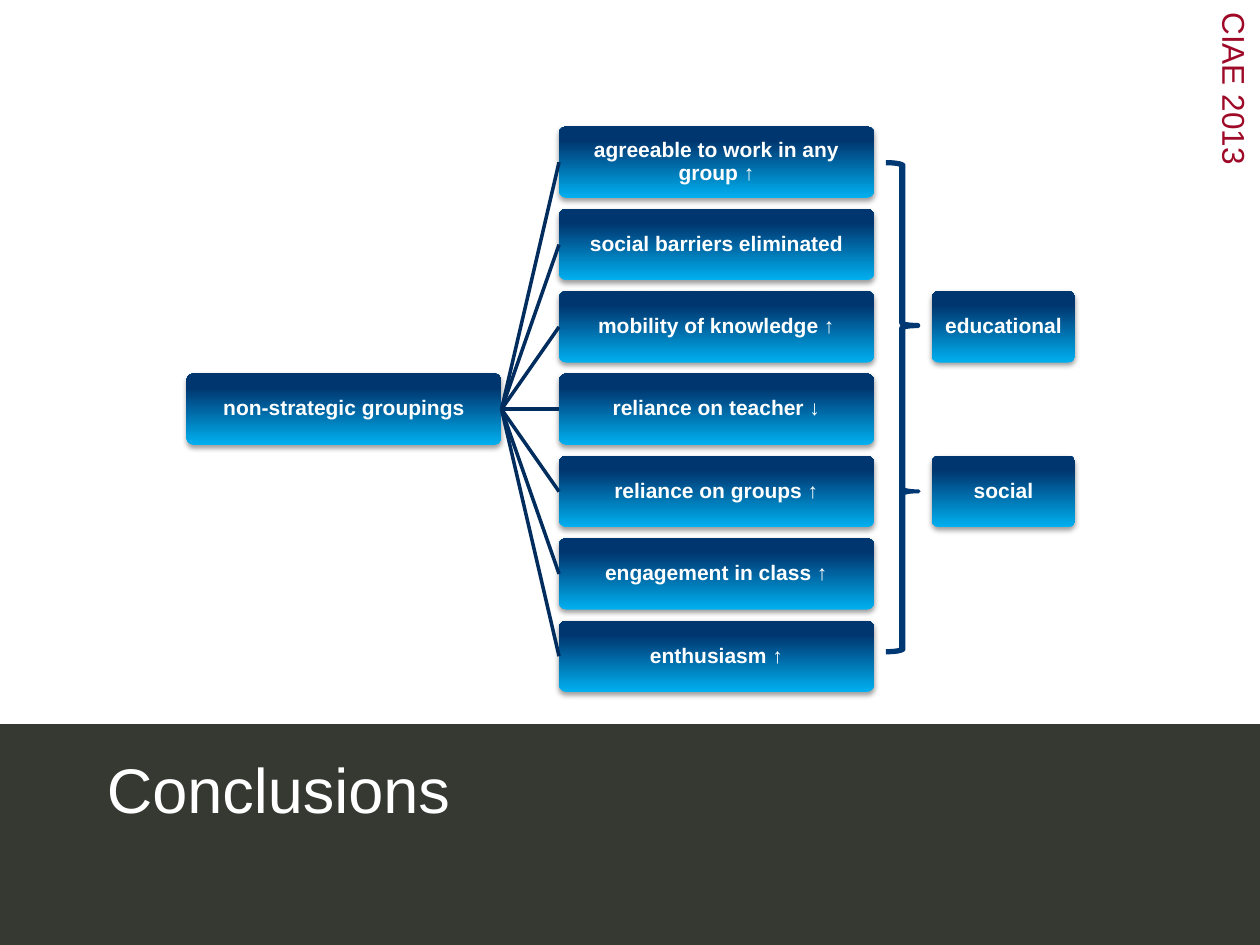
from copy import deepcopy
from dataclasses import dataclass

from lxml.etree import SubElement
from pptx import Presentation
from pptx.dml.color import RGBColor as RGB
from pptx.enum.shapes import MSO_CONNECTOR as Link, MSO_SHAPE as Shape
from pptx.enum.text import MSO_ANCHOR as Anchor, MSO_AUTO_SIZE as Fit, PP_ALIGN as Align
from pptx.oxml.ns import qn
from pptx.util import Cm, Pt

TITLE = "Conclusions"
EVENT = "CIAE 2013"
CAUSE = "non-strategic groupings"
EFFECTS = [
    "agreeable to work in any group ↑",
    "social barriers eliminated",
    "mobility of knowledge ↑",
    "reliance on teacher ↓",
    "reliance on groups ↑",
    "engagement in class ↑",
    "enthusiasm ↑",
]
KINDS = [("educational", 2), ("social", 4)]  # label, row
BRACES = [(17.86, 0.64, 0.333, 3), (17.91, 0.61, 0.672, 2.25)]  # left, width, tip, line


@dataclass
class Theme:
    font: str = "Arial"
    white: str = "FFFFFF"
    band: str = "363832"
    event: str = "9E0927"
    link: str = "002D5D"
    brace: str = "003874"
    fade: tuple = ((0, "00B0F0"), (0.8, "003670"), (1, "003771"))
    big: float = 36
    mid: float = 18
    small: float = 12


# Grid, in cm
LEFT, TOP = 3.76, 2.55
WIDE, SLIM, HIGH = 6.35, 2.9, 1.44
GAP, STEP = 1.16, 1.66
COLS = [LEFT + i * (WIDE + GAP) for i in range(3)]

theme = Theme()


def write(frame, text, size, color, bold=False):
    frame.text = text
    frame.word_wrap = True
    font = frame.paragraphs[0].runs[0].font
    font.name, font.size, font.bold = theme.font, Pt(size), bold
    font.color.rgb = RGB.from_string(color)


def fade(shape):
    """Fill with the three-stop gradient, light at the bottom."""
    fill = shape.fill
    fill.gradient()
    fill.gradient_angle = 90
    stops = shape._element.spPr.find(qn("a:gradFill")).find(qn("a:gsLst"))
    stops.append(deepcopy(stops[0]))
    for stop, (pos, color) in zip(fill.gradient_stops, theme.fade):
        stop.position = pos
        stop.color.rgb = RGB.from_string(color)


def shade(shape):
    """Give a soft shadow straight below."""
    shape.shadow.inherit = False
    effects = shape._element.spPr.find(qn("a:effectLst"))
    drop = SubElement(effects, qn("a:outerShdw"), blurRad=str(Pt(3.1)),
                      dist=str(Pt(1.6)), dir="5400000", rotWithShape="0")
    color = SubElement(drop, qn("a:srgbClr"), val="000000")
    SubElement(color, qn("a:alpha"), val="38000")


def add_box(shapes, text, col, row, width):
    box = shapes.add_shape(Shape.ROUNDED_RECTANGLE, Cm(COLS[col]),
                           Cm(TOP + row * STEP), Cm(width), Cm(HIGH))
    box.adjustments[0] = 0.1
    fade(box)
    box.line.fill.background()
    shade(box)
    frame = box.text_frame
    write(frame, text, theme.small, theme.white, bold=True)
    frame.vertical_anchor = Anchor.MIDDLE
    frame.margin_left = frame.margin_right = Cm(0.03)
    frame.margin_top = frame.margin_bottom = Cm(0.03)
    par = frame.paragraphs[0]
    par.alignment, par.line_spacing = Align.CENTER, 0.9
    return box


def join(shapes, start, end):
    link = shapes.add_connector(Link.STRAIGHT, 0, 0, 0, 0)
    link.begin_connect(start, 3)
    link.end_connect(end, 1)
    link.line.width = Pt(2)
    link.line.color.rgb = RGB.from_string(theme.link)
    SubElement(link._element.spPr, qn("a:effectLst"))


def add_brace(shapes, left, width, tip, line):
    brace = shapes.add_shape(Shape.RIGHT_BRACE, Cm(left), Cm(3.28), Cm(width), Cm(9.86))
    brace.adjustments[0], brace.adjustments[1] = 0.083, tip
    brace.fill.background()
    brace.line.width = Pt(line)
    brace.line.color.rgb = RGB.from_string(theme.brace)
    brace.shadow.inherit = False


def add_frame(deck, slide):
    """Add the bottom band, the title on it and the event name."""
    shapes = slide.shapes
    band = shapes.add_shape(Shape.RECTANGLE, 0, Cm(14.6), deck.slide_width, Cm(4.45))
    band.fill.solid()
    band.fill.fore_color.rgb = RGB.from_string(theme.band)
    band.line.fill.background()
    band.shadow.inherit = False

    title = shapes.title
    title.left, title.top, title.width, title.height = Cm(1.9), Cm(14.94), Cm(22.66), Cm(1.9)
    write(title.text_frame, TITLE, theme.big, theme.white)
    title.text_frame.auto_size = Fit.NONE
    title.text_frame.vertical_anchor = Anchor.MIDDLE
    title.text_frame.paragraphs[0].alignment = Align.LEFT
    band._element.addnext(title._element)

    event = shapes.add_textbox(Cm(20.42), Cm(3.96), Cm(8.94), Cm(1.02))
    event.rotation = 90
    write(event.text_frame, EVENT, theme.mid, theme.event)


def main():
    deck = Presentation()
    deck.slide_width, deck.slide_height = Cm(25.4), Cm(19.05)
    slide = deck.slides.add_slide(deck.slide_layouts[5])
    shapes = slide.shapes
    add_frame(deck, slide)
    cause = add_box(shapes, CAUSE, 0, len(EFFECTS) // 2, WIDE)
    for row, text in enumerate(EFFECTS):
        join(shapes, cause, add_box(shapes, text, 1, row, WIDE))
    for text, row in KINDS:
        add_box(shapes, text, 2, row, SLIM)
    for brace in BRACES:
        add_brace(shapes, *brace)
    deck.save("out.pptx")


if __name__ == "__main__":
    main()
